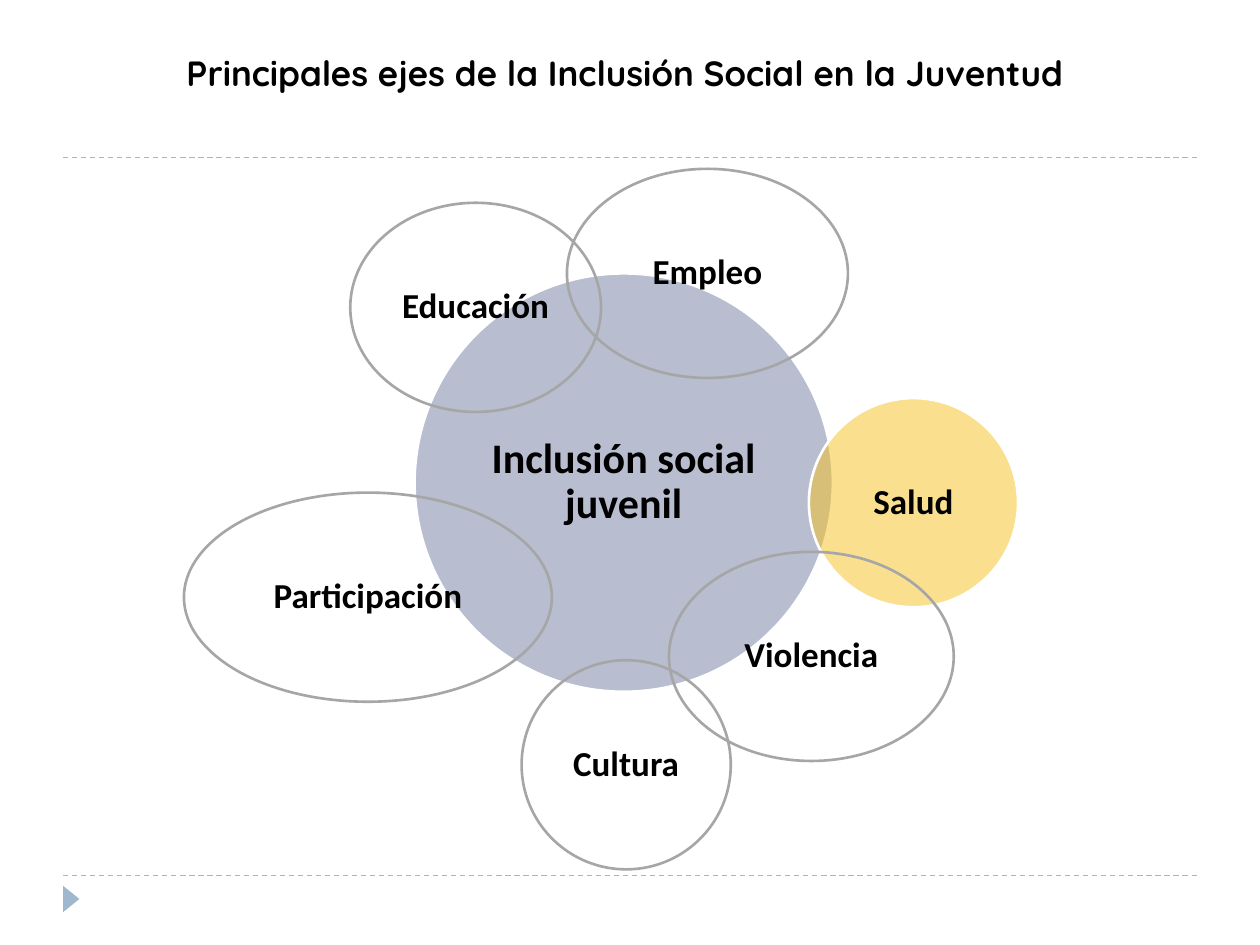
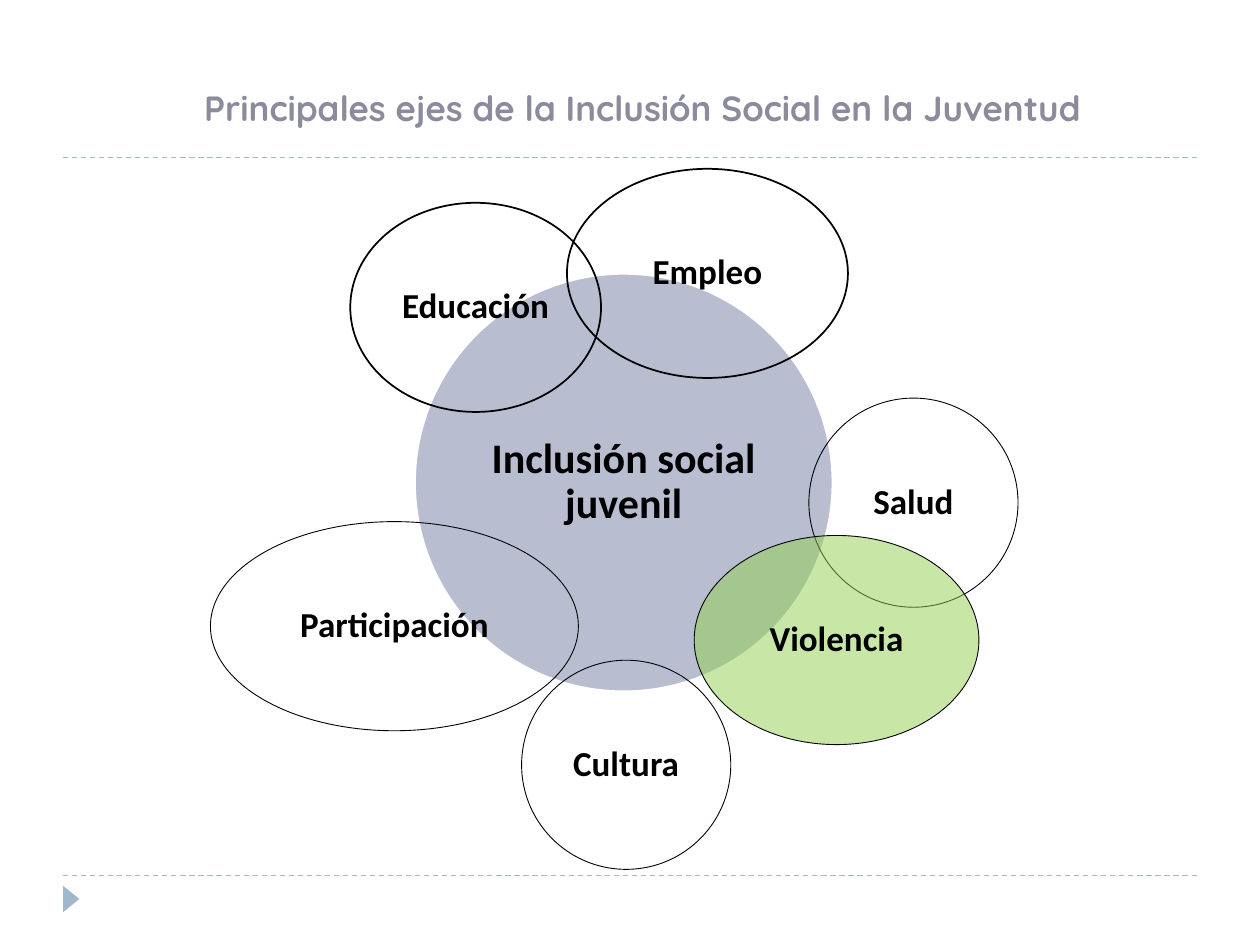
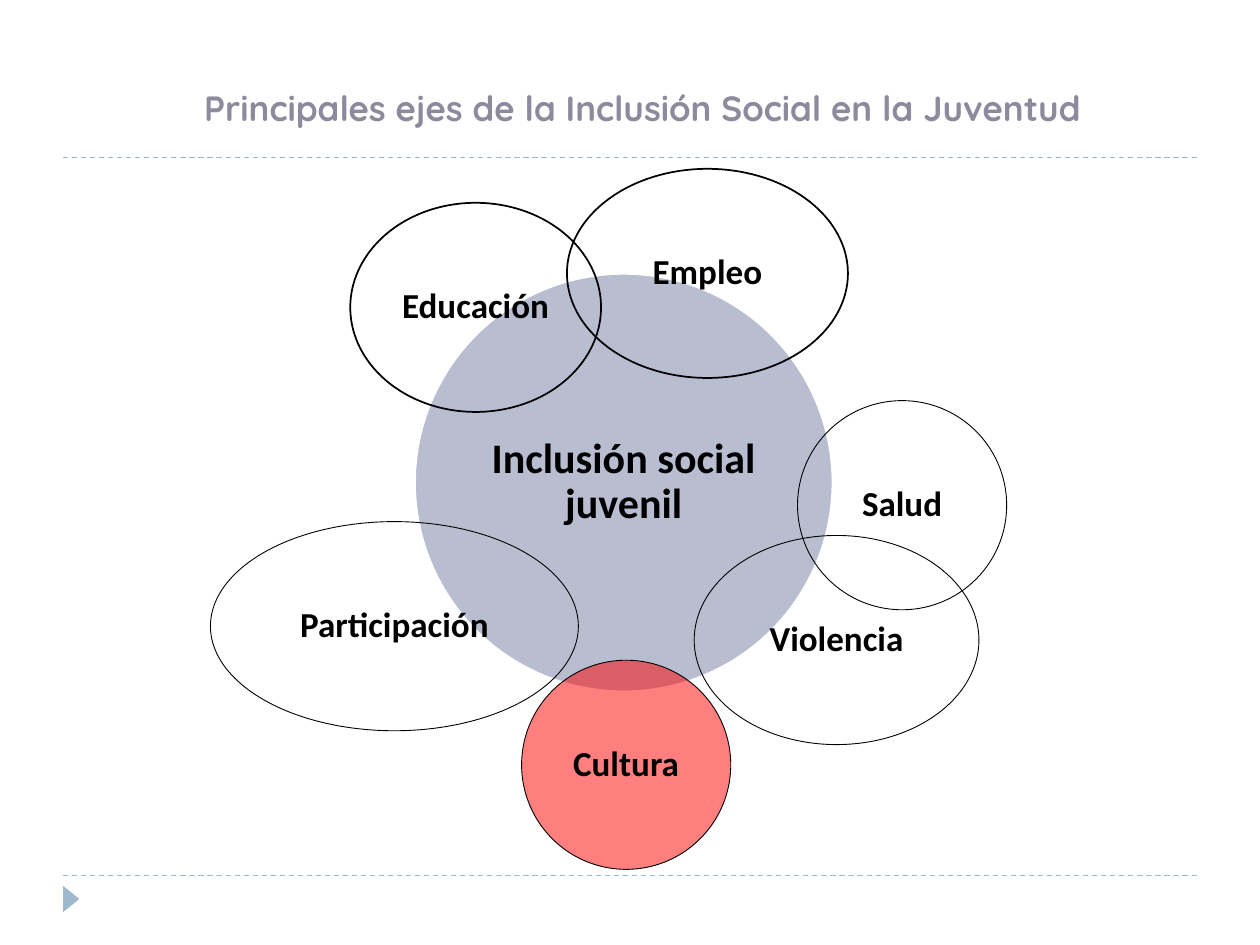
from dataclasses import dataclass, field

from lxml import etree
from pptx import Presentation
from pptx.dml.color import RGBColor
from pptx.enum.dml import MSO_LINE
from pptx.enum.shapes import MSO_CONNECTOR, MSO_SHAPE
from pptx.enum.text import MSO_ANCHOR, MSO_AUTO_SIZE, PP_ALIGN
from pptx.oxml.ns import qn
from pptx.util import Inches, Pt

DASH = MSO_LINE.DASH
STRAIGHT = MSO_CONNECTOR.STRAIGHT
ELLIPSE, TRIANGLE = MSO_SHAPE.OVAL, MSO_SHAPE.ISOSCELES_TRIANGLE
TOP, MIDDLE = MSO_ANCHOR.TOP, MSO_ANCHOR.MIDDLE
LEFT, CENTER = PP_ALIGN.LEFT, PP_ALIGN.CENTER
FIT_SHAPE = MSO_AUTO_SIZE.SHAPE_TO_FIT_TEXT

# Shared look
TITLE = "Principales ejes de la Inclusión Social en la Juventud"
TITLE_FONT, LABEL_FONT = "Quicksand", "Calibri"
BLACK, WHITE, GREY, MUTED = "000000", "FFFFFF", "A6A6A6", "8B8B9D"
ACCENT, CORE_FILL = "9FB8CD", "727CA3"
YELLOW, GREEN, RED = "F7C120", "92D050", "FF0000"
RULE_HEIGHTS = (6.95, 1.25)
AXIS_HEIGHT = 1.66
TITLE_ONLY = 5


@dataclass(frozen=True)
class Outline:
    color: str
    width: float


@dataclass(frozen=True)
class Axis:
    label: str
    left: float
    top: float
    width: float
    height: float = AXIS_HEIGHT
    size: int = 20


@dataclass(frozen=True)
class AxesSlide:
    title_at: tuple[float, float]
    title_color: str
    highlighted: str
    highlight_fill: str
    outline: Outline
    outlines: dict[str, Outline] = field(default_factory=dict)
    moved: dict[str, tuple[float, float]] = field(default_factory=dict)


CORE = Axis("Inclusión social juvenil", 3.29, 2.17, 3.32, 3.32, 24)
AXES = (
    Axis("Educación", 2.78, 1.61, 1.99),
    Axis("Empleo", 4.5, 1.34, 2.23),
    Axis("Salud", 6.42, 3.16, 1.66),
    Axis("Cultura", 4.14, 5.24, 1.66),
    Axis("Participación", 1.67, 4.14, 2.92),
    Axis("Violencia", 5.51, 4.25, 2.26),
)

WHITE_EDGE = Outline(WHITE, 1.5)
THIN_EDGE = Outline(BLACK, 0.5)
UPPER_EDGES = {label: Outline(BLACK, 1) for label in ("Educación", "Empleo")}

SLIDES = (
    AxesSlide((1.38, 0.36), BLACK, "Salud", YELLOW, Outline(GREY, 1.5),
              {"Salud": WHITE_EDGE},
              {"Participación": (1.46, 3.91), "Violencia": (5.31, 4.38)}),
    AxesSlide((1.52, 0.64), MUTED, "Violencia", GREEN, THIN_EDGE, UPPER_EDGES),
    AxesSlide((1.52, 0.64), MUTED, "Cultura", RED, THIN_EDGE, UPPER_EDGES,
              {"Salud": (6.33, 3.18)}),
)


def rgb(color: str) -> RGBColor:
    return RGBColor.from_string(color)


def add_text(paragraph, text: str, font: str, size: int, color: str) -> None:
    run = paragraph.add_run()
    run.text = text
    run.font.name = font
    run.font.size = Pt(size)
    run.font.bold = True
    run.font.color.rgb = rgb(color)


def fill_half_transparent(shape, color: str) -> None:
    shape.fill.solid()
    shape.fill.fore_color.rgb = rgb(color)
    tint = shape.element.spPr.find(qn("a:solidFill")).find(qn("a:srgbClr"))
    etree.SubElement(tint, qn("a:alpha"), val="50000")


def add_frame(slide) -> None:
    """Dashed rules and the corner marker."""
    for height in RULE_HEIGHTS:
        rule = slide.shapes.add_connector(
            STRAIGHT, Inches(0.5), Inches(height), Inches(9.5), Inches(height))
        rule.line.color.rgb = rgb(ACCENT)
        rule.line.width = Pt(0.75)
        rule.line.dash_style = DASH
        etree.SubElement(rule.element.spPr, qn("a:effectLst"))
    marker = slide.shapes.add_shape(
        TRIANGLE, Inches(0.46), Inches(7.07), Inches(0.21), Inches(0.13))
    marker.rotation = 90
    marker.shadow.inherit = False
    marker.fill.solid()
    marker.fill.fore_color.rgb = rgb(ACCENT)
    marker.line.fill.background()


def add_title(slide, at: tuple[float, float], color: str) -> None:
    title = slide.shapes.title
    title.left, title.top = (Inches(value) for value in at)
    title.width, title.height = Inches(7.34), Inches(0.44)
    frame = title.text_frame
    frame.word_wrap = False
    frame.auto_size = FIT_SHAPE
    frame.vertical_anchor = TOP
    frame.paragraphs[0].alignment = LEFT
    add_text(frame.paragraphs[0], TITLE, TITLE_FONT, 20, color)


def add_axis(slide, axis: Axis, at: tuple[float, float], outline: Outline,
             fill: str | None) -> None:
    left, top = at
    circle = slide.shapes.add_shape(
        ELLIPSE, Inches(left), Inches(top), Inches(axis.width), Inches(axis.height))
    circle.shadow.inherit = False
    if fill:
        fill_half_transparent(circle, fill)
    else:
        circle.fill.background()
    circle.line.color.rgb = rgb(outline.color)
    circle.line.width = Pt(outline.width)

    frame = circle.text_frame
    frame.word_wrap = True
    frame.vertical_anchor = MIDDLE
    frame.margin_left = frame.margin_right = Inches(0.03)
    frame.margin_top = frame.margin_bottom = Inches(0.03)
    paragraph = frame.paragraphs[0]
    paragraph.alignment = CENTER
    paragraph.line_spacing = 0.9
    add_text(paragraph, axis.label, LABEL_FONT, axis.size, BLACK)


def build_slide(presentation, content: AxesSlide) -> None:
    slide = presentation.slides.add_slide(presentation.slide_layouts[TITLE_ONLY])
    add_frame(slide)
    add_title(slide, content.title_at, content.title_color)
    add_axis(slide, CORE, (CORE.left, CORE.top), WHITE_EDGE, CORE_FILL)
    for axis in AXES:
        at = content.moved.get(axis.label, (axis.left, axis.top))
        outline = content.outlines.get(axis.label, content.outline)
        fill = content.highlight_fill if axis.label == content.highlighted else None
        add_axis(slide, axis, at, outline, fill)


def main() -> None:
    presentation = Presentation()
    presentation.slide_width = Inches(10)
    presentation.slide_height = Inches(7.5)
    for content in SLIDES:
        build_slide(presentation, content)
    presentation.save("out.pptx")


if __name__ == "__main__":
    main()
